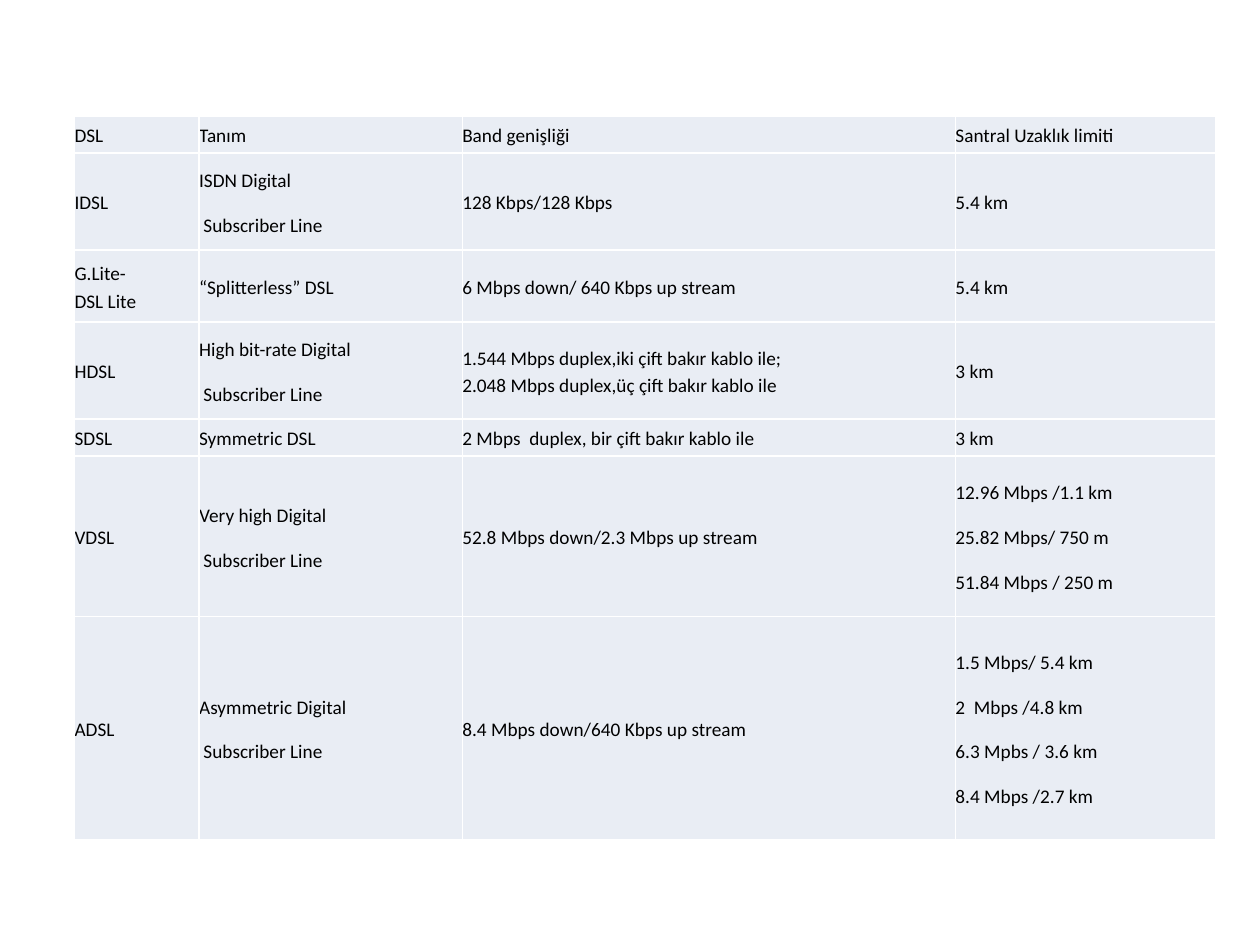
from pptx import Presentation
from pptx.dml.color import RGBColor
from pptx.enum.text import MSO_ANCHOR
from pptx.oxml import parse_xml
from pptx.oxml.ns import nsdecls
from pptx.util import Pt

COLORS = {"cell": "E9EDF4", "border": "FFFFFF", "text": "000000"}
FONT = "Calibri"

# Content: a list holds the paragraphs of a cell, "\n" is a line break
DSL_TYPES = [
    ("DSL", "Tanım", "Band genişliği", "Santral Uzaklık limiti"),
    ("IDSL", ["ISDN Digital", " Subscriber Line"], "128 Kbps/128 Kbps", "5.4 km"),
    ("G.Lite-\nDSL Lite", "“Splitterless” DSL", "6 Mbps down/ 640 Kbps up stream", "5.4 km"),
    ("HDSL", ["High bit-rate Digital", " Subscriber Line"],
     "1.544 Mbps duplex,iki çift bakır kablo ile;\n2.048 Mbps duplex,üç çift bakır kablo ile",
     "3 km"),
    ("SDSL", "Symmetric DSL", "2 Mbps  duplex, bir çift bakır kablo ile", "3 km"),
    ("VDSL", ["Very high Digital", " Subscriber Line"], "52.8 Mbps down/2.3 Mbps up stream",
     ["12.96 Mbps /1.1 km", "25.82 Mbps/ 750 m", "51.84 Mbps / 250 m"]),
    ("ADSL", ["Asymmetric Digital", " Subscriber Line"], "8.4 Mbps down/640 Kbps up stream",
     ["1.5 Mbps/ 5.4 km", "2  Mbps /4.8 km", "6.3 Mpbs / 3.6 km", "8.4 Mbps /2.7 km"]),
]
LEFT, TOP = 42.6, 66.2
COLUMN_WIDTHS = [71.2, 150.4, 281.8, 148.6]
ROW_HEIGHTS = [21.3, 55.4, 41.1, 55.4, 21.3, 91.8, 127.3]


def add_borders(cell):
    properties = cell._tc.get_or_add_tcPr()
    for side in ("lnL", "lnR", "lnT", "lnB"):
        properties.append(parse_xml(
            f'<a:{side} {nsdecls("a")} w="{Pt(1)}"><a:solidFill>'
            f'<a:srgbClr val="{COLORS["border"]}"/></a:solidFill></a:{side}>'))


def write_paragraph(paragraph, text):
    paragraph.line_spacing = 1.15
    paragraph.space_after = Pt(10)
    for index, line in enumerate(text.split("\n")):
        if index:
            paragraph.add_line_break()
        run = paragraph.add_run()
        run.text = line
        run.font.name = FONT
        run.font.size = Pt(11)
        run.font.color.rgb = RGBColor.from_string(COLORS["text"])


def fill_cell(cell, content):
    cell.margin_left = cell.margin_right = cell.margin_top = cell.margin_bottom = 0
    cell.vertical_anchor = MSO_ANCHOR.MIDDLE
    add_borders(cell)
    cell.fill.solid()
    cell.fill.fore_color.rgb = RGBColor.from_string(COLORS["cell"])
    paragraphs = [content] if isinstance(content, str) else content
    frame = cell.text_frame
    for index, text in enumerate(paragraphs):
        write_paragraph(frame.add_paragraph() if index else frame.paragraphs[0], text)


def main():
    deck = Presentation()
    deck.slide_width, deck.slide_height = Pt(720), Pt(540)
    slide = deck.slides.add_slide(deck.slide_layouts[6])

    # Comparison table of the DSL types
    comparison = slide.shapes.add_table(
        len(DSL_TYPES), len(COLUMN_WIDTHS), Pt(LEFT), Pt(TOP),
        Pt(sum(COLUMN_WIDTHS)), Pt(sum(ROW_HEIGHTS))).table
    comparison.first_row = comparison.horz_banding = False
    for column, width in zip(comparison.columns, COLUMN_WIDTHS):
        column.width = Pt(width)
    for row, height, contents in zip(comparison.rows, ROW_HEIGHTS, DSL_TYPES):
        row.height = Pt(height)
        for cell, content in zip(row.cells, contents):
            fill_cell(cell, content)

    deck.save("out.pptx")


if __name__ == "__main__":
    main()
